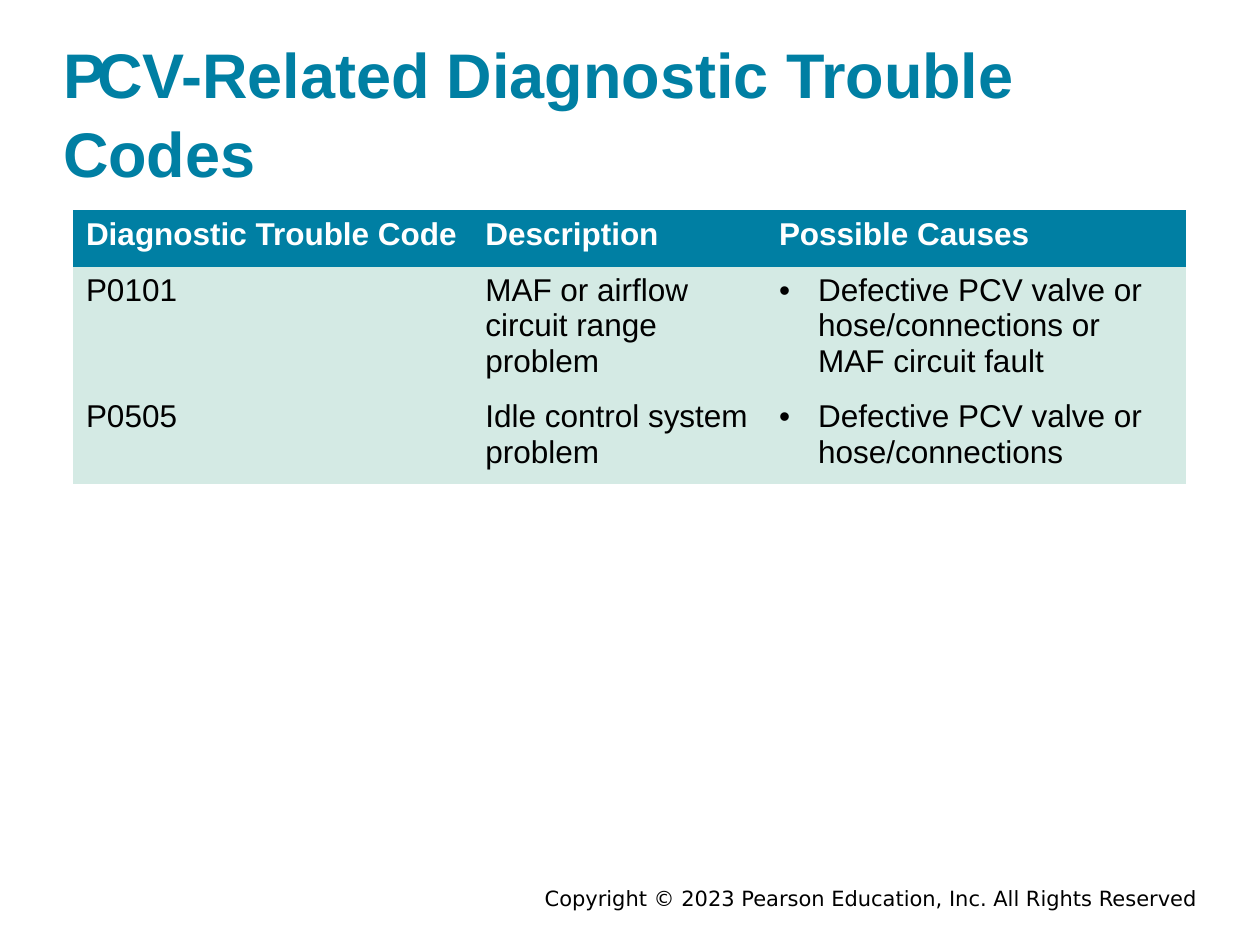
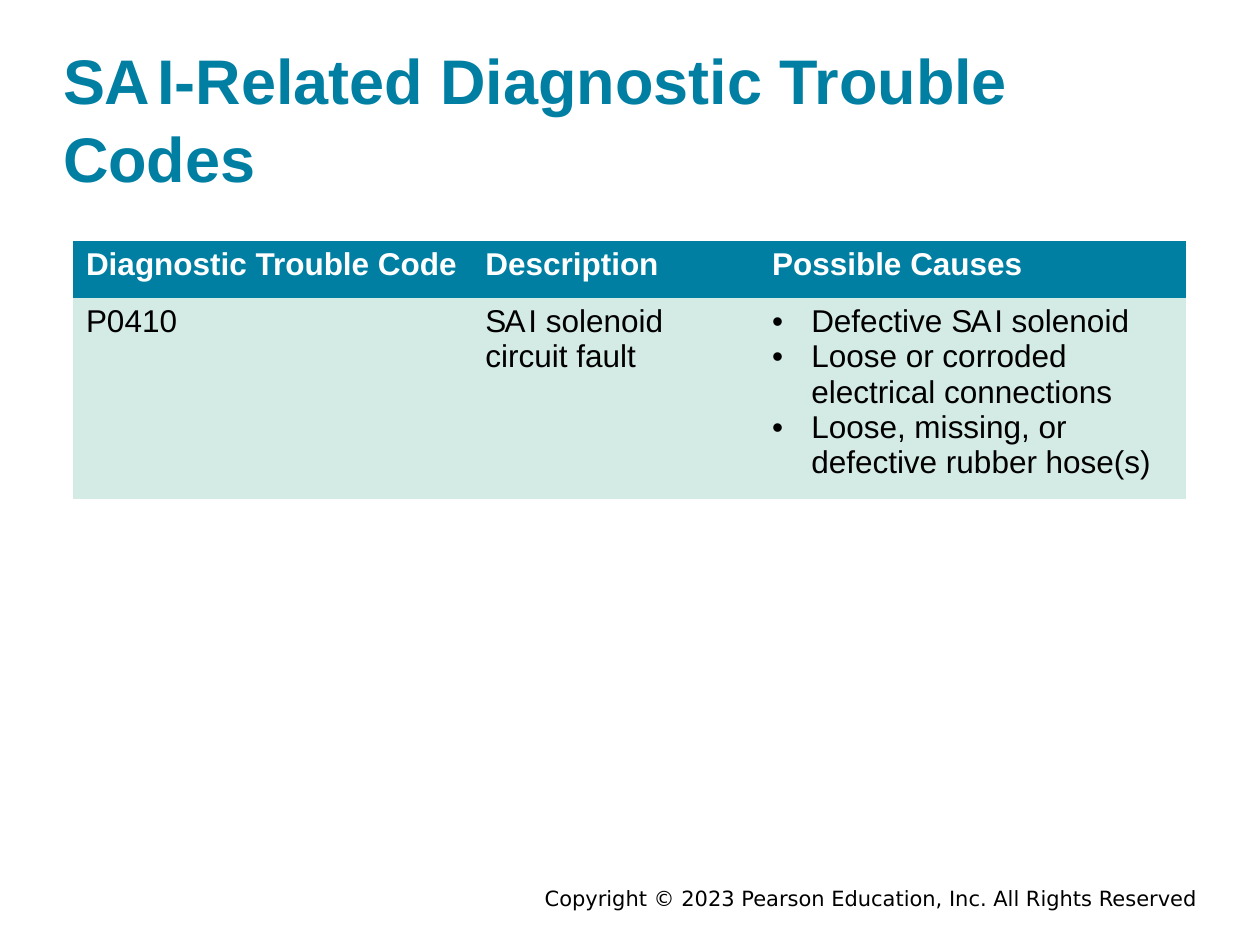
from lxml import etree
from pptx import Presentation
from pptx.dml.color import RGBColor
from pptx.enum.text import MSO_ANCHOR, MSO_AUTO_SIZE, PP_ALIGN
from pptx.oxml.ns import qn
from pptx.util import Cm, Pt

TEAL = RGBColor(0x00, 0x7F, 0xA3)
MINT = RGBColor(0xD4, 0xEA, 0xE4)
WHITE = RGBColor(0xFF, 0xFF, 0xFF)
BLACK = RGBColor(0x00, 0x00, 0x00)
PLAIN_TABLE = "{2D5ABB26-0587-4C30-8999-92F81FD0307C}"
COPYRIGHT = "Copyright © 2023 Pearson Education, Inc. All Rights Reserved"
HEADINGS = ["Diagnostic Trouble Code", "Description", ["Possible Causes"]]
CAUSES = 2  # column that holds the bulleted causes

# Letters between bars are set tight. Lengths are in centimetres.
SLIDES = [
    {
        "title": "|PC|V-Related Diagnostic Trouble Codes",
        "title_top": 0.53, "title_height": 2.92, "table_top": 4.24,
        "columns": [8.05, 5.92, 8.46], "rows": [1.14, 2.54, 1.83],
        "codes": [
            ["P0101", "MAF or airflow circuit range problem",
             ["Defective PCV valve or hose/connections or MAF circuit fault"]],
            ["P0505", "Idle control system problem",
             ["Defective PCV valve or hose/connections"]],
        ],
    },
    {
        "title": "|S A |I-Related Diagnostic Trouble Codes",
        "title_top": 0.64, "title_height": 2.84, "table_top": 4.86,
        "columns": [8.05, 5.78, 8.6], "rows": [1.14, 4.06],
        "codes": [
            ["P0410", "|S A |I solenoid circuit fault",
             ["Defective |S A |I solenoid",
              "Loose or corroded electrical connections",
              "Loose, missing, or defective rubber hose(s)"]],
        ],
    },
]


def write(paragraph, text, size, color, bold=False, font="Arial", tightness=0):
    """Fill a paragraph, closing up the letters between bars by tightness points."""
    for position, piece in enumerate(text.split("|")):
        if piece:
            run = paragraph.add_run()
            run.text = piece
            if position % 2:
                run.font._element.set("spc", str(int(-100 * tightness)))
    paragraph.font.name = font
    paragraph.font.size = Pt(size)
    paragraph.font.bold = bold
    paragraph.font.color.rgb = color


def add_bullet(paragraph):
    properties = paragraph._p.get_or_add_pPr()
    properties.set("marL", str(Cm(0.79)))
    properties.set("indent", str(-Cm(0.79)))
    etree.SubElement(properties, qn("a:buFont"), typeface="Arial")
    etree.SubElement(properties, qn("a:buChar"), char="•")


prs = Presentation()
prs.slide_width, prs.slide_height = Cm(25.4), Cm(19.05)
title_only = prs.slide_layouts[5]

for content in SLIDES:
    slide = prs.slides.add_slide(title_only)

    copyright_box = slide.shapes.add_textbox(Cm(4.5), Cm(17.73), Cm(19.89), Cm(0.76))
    copyright_box.text_frame.word_wrap = True
    copyright_line = copyright_box.text_frame.paragraphs[0]
    copyright_line.alignment = PP_ALIGN.RIGHT
    write(copyright_line, COPYRIGHT, 12, BLACK, font="DejaVu Sans")

    title = slide.shapes.title
    title.left, title.top = Cm(1.27), Cm(content["title_top"])
    title.width, title.height = Cm(22.86), Cm(content["title_height"])
    heading = title.text_frame
    heading.auto_size = MSO_AUTO_SIZE.NONE
    heading.vertical_anchor = MSO_ANCHOR.TOP
    heading.margin_left = heading.margin_right = 0
    heading.paragraphs[0].alignment = PP_ALIGN.LEFT
    heading.paragraphs[0].line_spacing = 1.04
    write(heading.paragraphs[0], content["title"], 36, TEAL, bold=True, tightness=4.5)

    columns, rows = content["columns"], content["rows"]
    code_frame = slide.shapes.add_table(
        len(rows), len(columns), Cm(1.48), Cm(content["table_top"]),
        Cm(sum(columns)), Cm(sum(rows)))
    code_frame._element.find(".//" + qn("a:tableStyleId")).text = PLAIN_TABLE
    code_table = code_frame.table
    for column, width in zip(code_table.columns, columns):
        column.width = Cm(width)
    for row, height in zip(code_table.rows, rows):
        row.height = Cm(height)

    for row_number, entries in enumerate([HEADINGS] + content["codes"]):
        is_header = row_number == 0
        for column_number, entry in enumerate(entries):
            cell = code_table.cell(row_number, column_number)
            cell.fill.solid()
            cell.fill.fore_color.rgb = TEAL if is_header else MINT
            lines = entry if column_number == CAUSES else [entry]
            for line_number, line in enumerate(lines):
                frame = cell.text_frame
                paragraph = frame.add_paragraph() if line_number else frame.paragraphs[0]
                if column_number == CAUSES and not is_header:
                    add_bullet(paragraph)
                write(paragraph, line, 18, WHITE if is_header else BLACK,
                      bold=is_header, tightness=2.5)

prs.save("out.pptx")
